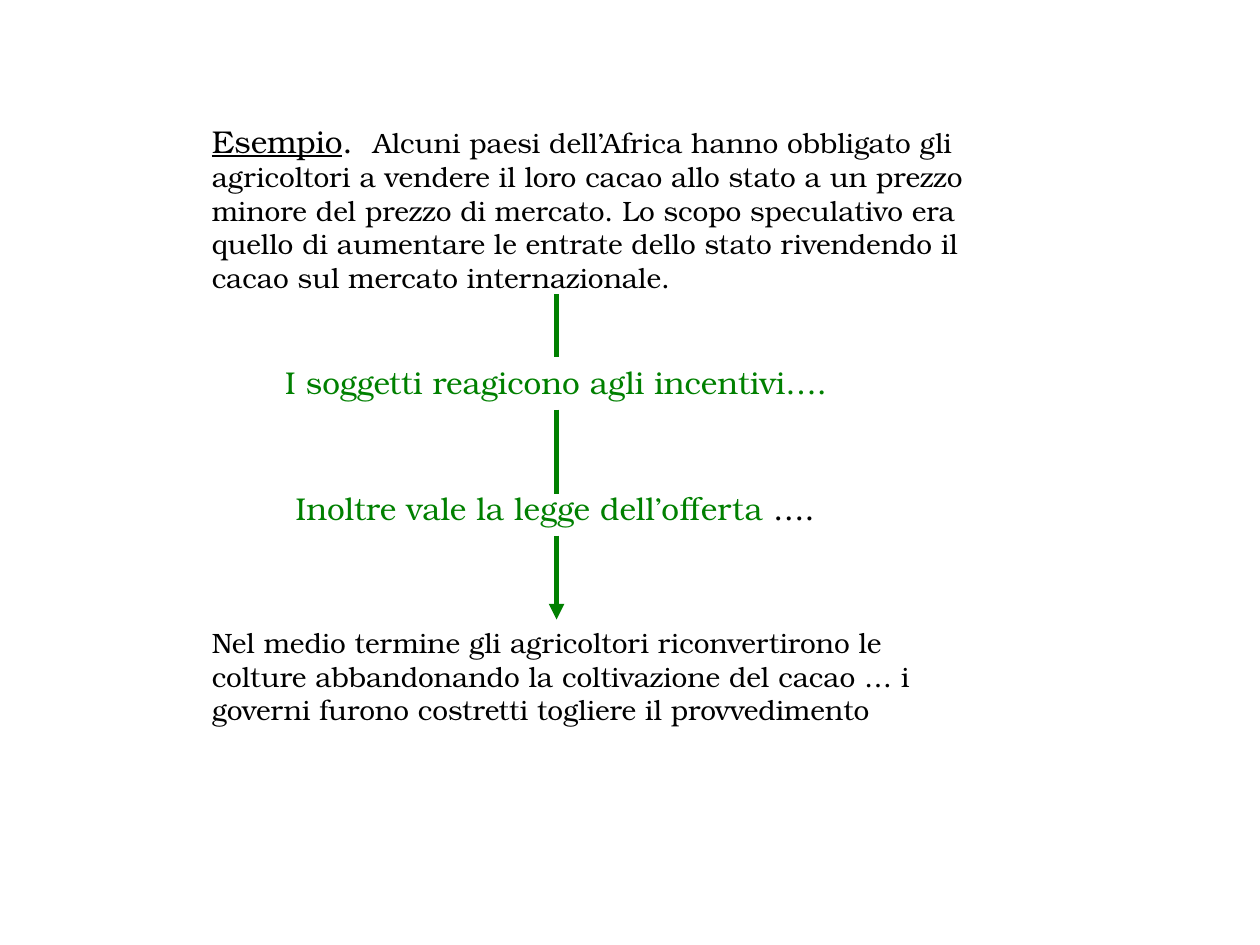
from dataclasses import dataclass

from lxml import etree
from pptx import Presentation
from pptx.dml.color import RGBColor
from pptx.enum.shapes import MSO_CONNECTOR
from pptx.enum.text import MSO_AUTO_SIZE
from pptx.oxml.ns import qn
from pptx.util import Cm, Pt

STRAIGHT = MSO_CONNECTOR.STRAIGHT
GROW = MSO_AUTO_SIZE.SHAPE_TO_FIT_TEXT


@dataclass(frozen=True)
class Theme:
    font: str = "TeX Gyre Bonum"
    ink: RGBColor = RGBColor(0, 0, 0)
    green: RGBColor = RGBColor(0, 128, 0)
    body: Pt = Pt(16)
    lead: Pt = Pt(18)
    line: Pt = Pt(3)


THEME = Theme()


def add_text(slide, box, parts):
    frame = slide.shapes.add_textbox(*map(Cm, box)).text_frame
    frame.word_wrap = True
    frame.auto_size = GROW
    for text, size, color, under in parts:
        run = frame.paragraphs[0].add_run()
        run.text = text
        font = run.font
        font.name, font.size, font.underline = THEME.font, size, under
        font.color.rgb = color


def add_flow(slide, x, spans):
    group = slide.shapes.add_group_shape()
    for top, end in spans:
        line = group.shapes.add_connector(
            STRAIGHT, Cm(x), Cm(top), Cm(x), Cm(end))
        line.line.color.rgb = THEME.green
        line.line.width = THEME.line
        etree.SubElement(line._element.spPr, qn("a:effectLst"))
    etree.SubElement(line.line._get_or_add_ln(), qn("a:tailEnd"),
                     type="triangle")


def add_steps(slide, box):
    left, top, width, height = box
    add_text(slide, box, [
        ("I soggetti reagicono agli incentivi….",
         THEME.lead, THEME.green, False)])
    add_text(slide, (left + 0.21, top + 2.54, width, height), [
        ("Inoltre vale la legge dell’offerta",
         THEME.lead, THEME.green, False),
        (" ….", THEME.lead, THEME.ink, False)])


def main():
    deck = Presentation()
    deck.slide_width, deck.slide_height = Cm(25.4), Cm(19.05)
    slide = deck.slides.add_slide(deck.slide_layouts[6])
    add_text(slide, (4.02, 2.33, 15.85, 3.73), [
        ("Esempio", THEME.lead, THEME.ink, True),
        (".  ", THEME.lead, THEME.ink, False),
        ("Alcuni paesi dell’Africa hanno obbligato gli agricoltori a vendere "
         "il loro cacao allo stato a un prezzo minore del prezzo di mercato. "
         "Lo scopo speculativo era quello di aumentare le entrate dello stato "
         "rivendendo il cacao sul mercato internazionale.",
         THEME.body, THEME.ink, False)])
    add_steps(slide, (5.5, 7.2, 12.7, 1.02))
    add_text(slide, (4.02, 12.49, 15.85, 2.29), [
        ("Nel medio termine gli agricoltori riconvertirono le colture "
         "abbandonando la coltivazione del cacao … i governi furono "
         "costretti togliere il provvedimento",
         THEME.body, THEME.ink, False)])
    add_flow(slide, 11.22, [(5.93, 7.2), (8.26, 9.95), (10.8, 12.49)])
    deck.save("out.pptx")


if __name__ == "__main__":
    main()
